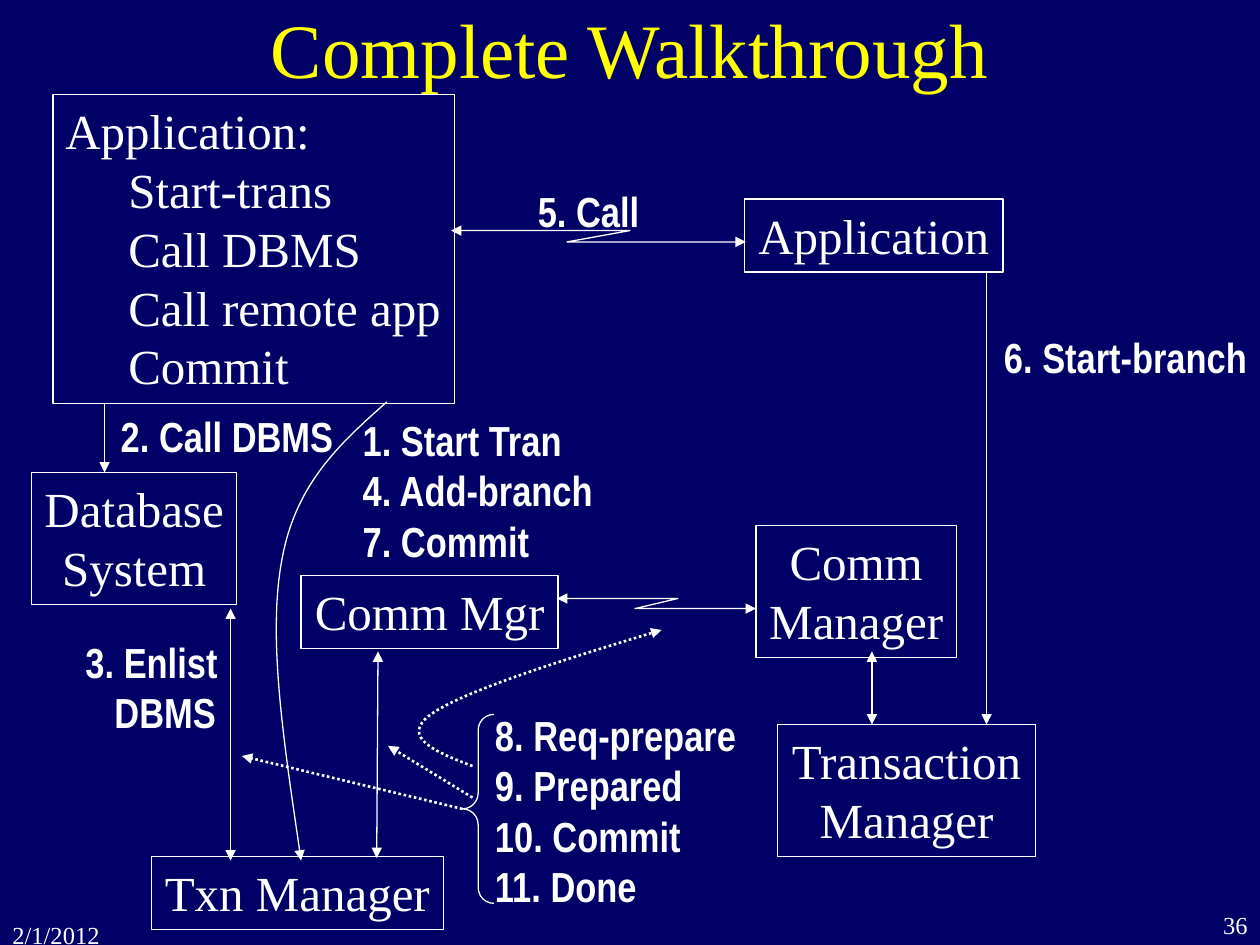
"""Build the Complete Walkthrough slide of a distributed transaction."""
from lxml import etree
from pptx import Presentation
from pptx.dml.color import RGBColor
from pptx.enum.dml import MSO_LINE
from pptx.enum.shapes import MSO_CONNECTOR, MSO_SHAPE
from pptx.enum.text import MSO_ANCHOR, MSO_AUTO_SIZE, PP_ALIGN
from pptx.oxml.ns import qn
from pptx.util import Inches, Pt

NAVY = RGBColor(0x00, 0x00, 0x66)
WHITE = RGBColor(0xFF, 0xFF, 0xFF)
YELLOW = RGBColor(0xFF, 0xFF, 0x00)
SERIF, NARROW = "Times New Roman", "Arial Narrow"
LEFT, CENTER, RIGHT = PP_ALIGN.LEFT, PP_ALIGN.CENTER, PP_ALIGN.RIGHT
TOP, MIDDLE = MSO_ANCHOR.TOP, MSO_ANCHOR.MIDDLE
NONE, GROW = MSO_AUTO_SIZE.NONE, MSO_AUTO_SIZE.SHAPE_TO_FIT_TEXT
RECT, BRACE = MSO_SHAPE.RECTANGLE, MSO_SHAPE.LEFT_BRACE
STRAIGHT, DOTS = MSO_CONNECTOR.STRAIGHT, MSO_LINE.ROUND_DOT


def write(shape, text, font=SERIF, size=28, color=WHITE, bold=False,
          align=LEFT, anchor=TOP, fit=GROW, indent=0):
    frame = shape.text_frame
    frame.word_wrap = fit == NONE
    frame.auto_size = fit
    frame.vertical_anchor = anchor
    for row, words in enumerate(text.split("\n")):
        para = frame.paragraphs[0] if row == 0 else frame.add_paragraph()
        para.alignment = align
        para.line_spacing = Pt(size * 1.2)
        if row and indent:
            para.level = 1
            props = para._p.get_or_add_pPr()
            props.set("marL", str(Inches(indent)))
            props.set("indent", "0")
        run = para.add_run()
        run.text = words
        run.font.name = font
        run.font.size = Pt(size)
        run.font.bold = bold
        run.font.color.rgb = color


def stroke(shape, ends="", dotted=False):
    shape.line.color.rgb = WHITE
    shape.line.width = Pt(1.5 if dotted else 0.75)
    if dotted:
        shape.line.dash_style = DOTS
    line = shape.line._get_or_add_ln()
    for end in ends.split():
        etree.SubElement(line, qn("a:" + end), type="triangle")
    props = shape._element.spPr
    if props.find(qn("a:effectLst")) is None:
        etree.SubElement(props, qn("a:effectLst"))


deck = Presentation()
deck.slide_width, deck.slide_height = Inches(10), Inches(7.5)
slide = deck.slides.add_slide(deck.slide_layouts[6])
slide.background.fill.solid()
slide.background.fill.fore_color.rgb = NAVY
shapes = slide.shapes

frames = [
    ("2/1/2012", (0, 7.25, 1, 0.25), dict(size=14)),
    ("36", (9.08, 7.17, 0.92, 0.33), dict(size=14, align=RIGHT)),
    ("Complete Walkthrough", (0.75, 0, 8.5, 0.75),
     dict(size=44, color=YELLOW, align=CENTER, anchor=MIDDLE)),
]
for text, place, style in frames:
    write(shapes.add_textbox(*map(Inches, place)), text, fit=NONE, **style)

boxes = [
    ("Application:\nStart-trans\nCall DBMS\nCall remote app\nCommit",
     (0.42, 0.75, 3.19, 2.45), dict(indent=0.5)),
    ("Application", (5.91, 1.58, 2.05, 0.58), dict(align=CENTER)),
    ("Comm Mgr", (2.39, 4.57, 2.04, 0.58), dict(align=CENTER)),
    ("Database\nSystem", (0.25, 3.75, 1.63, 1.05), dict(align=CENTER)),
    ("Txn Manager", (1.2, 6.8, 2.32, 0.58), dict(align=CENTER)),
    ("Transaction\nManager", (6.17, 5.75, 2.05, 1.05), dict(align=CENTER)),
    ("Comm\nManager", (6, 4.17, 1.59, 1.05), dict(align=CENTER)),
]
for text, place, style in boxes:
    box = shapes.add_shape(RECT, *map(Inches, place))
    box.shadow.inherit = False
    box.fill.background()
    stroke(box)
    write(box, text, **style)

labels = [
    ("8. Req-prepare\n9. Prepared\n10. Commit\n11. Done", (3.83, 5.58, 2.12, 1.7)),
    ("1. Start Tran\n4. Add-branch\n7. Commit", (2.78, 3.24, 2.04, 1.3)),
    ("2. Call DBMS", (0.86, 3.21, 1.89, 0.5)),
    ("5. Call", (4.17, 1.42, 1.01, 0.5)),
    ("6. Start-branch", (7.87, 2.58, 2.13, 0.5)),
    ("3. Enlist\nDBMS", (0.58, 5, 1.25, 0.9)),
]
for text, place in labels:
    indent = 0.23 if text.endswith("DBMS") else 0
    write(shapes.add_textbox(*map(Inches, place)), text,
          font=NARROW, size=24, bold=True, indent=indent)

brace = shapes.add_shape(BRACE, *map(Inches, (3.67, 5.67, 0.25, 1.5)))
brace.adjustments[0] = 0.5
brace.shadow.inherit = False
brace.fill.background()
stroke(brace)

BOTH, LAST = "headEnd tailEnd", "tailEnd"
arrows = [
    ((0.83, 3.2, 0.83, 3.75), LAST, False),
    ((3, 5.17, 2.99, 6.81), BOTH, False),
    ((7.83, 2.17, 7.83, 5.75), LAST, False),
    ((6.92, 5.17, 6.92, 5.75), BOTH, False),
    ((1.83, 4.83, 1.83, 6.83), BOTH, False),
    ((3.67, 6.42, 1.92, 6), LAST, True),
    ((3.75, 6.33, 3.08, 5.92), LAST, True),
]
for place, ends, dotted in arrows:
    arrow = shapes.add_connector(STRAIGHT, *map(Inches, place))
    stroke(arrow, ends, dotted)

bends = [
    ([(3.58, 1.83), (5, 1.83), (4.5, 1.92), (5.92, 1.92)], BOTH, False, False),
    ([(4.42, 4.75), (5.38, 4.75), (5.04, 4.83), (6, 4.83)], BOTH, False, False),
    ([(3.07, 3.19), (2.71, 3.51), (2.35, 3.83), (2.24, 4.43),
      (2.12, 5.04), (2.26, 5.94), (2.39, 6.83)], LAST, False, True),
    ([(3.75, 6.08), (3.46, 5.97), (3.17, 5.85), (3.42, 5.67),
      (3.67, 5.49), (4.46, 5.24), (5.25, 5)], LAST, True, True),
]
for points, ends, dotted, curved in bends:
    spots = [(Inches(x), Inches(y)) for x, y in points]
    pen = shapes.build_freeform(*spots[0])
    pen.add_line_segments(spots[1:], close=False)
    bend = pen.convert_to_shape()
    bend.shadow.inherit = False
    bend.fill.background()
    stroke(bend, ends, dotted)
    if curved:
        steps = list(bend._element.iter(qn("a:lnTo")))
        track = steps[0].getparent()
        for start in range(0, len(steps), 3):
            curve = etree.SubElement(track, qn("a:cubicBezTo"))
            for step in steps[start:start + 3]:
                curve.append(step[0])
                track.remove(step)

deck.save("out.pptx")
